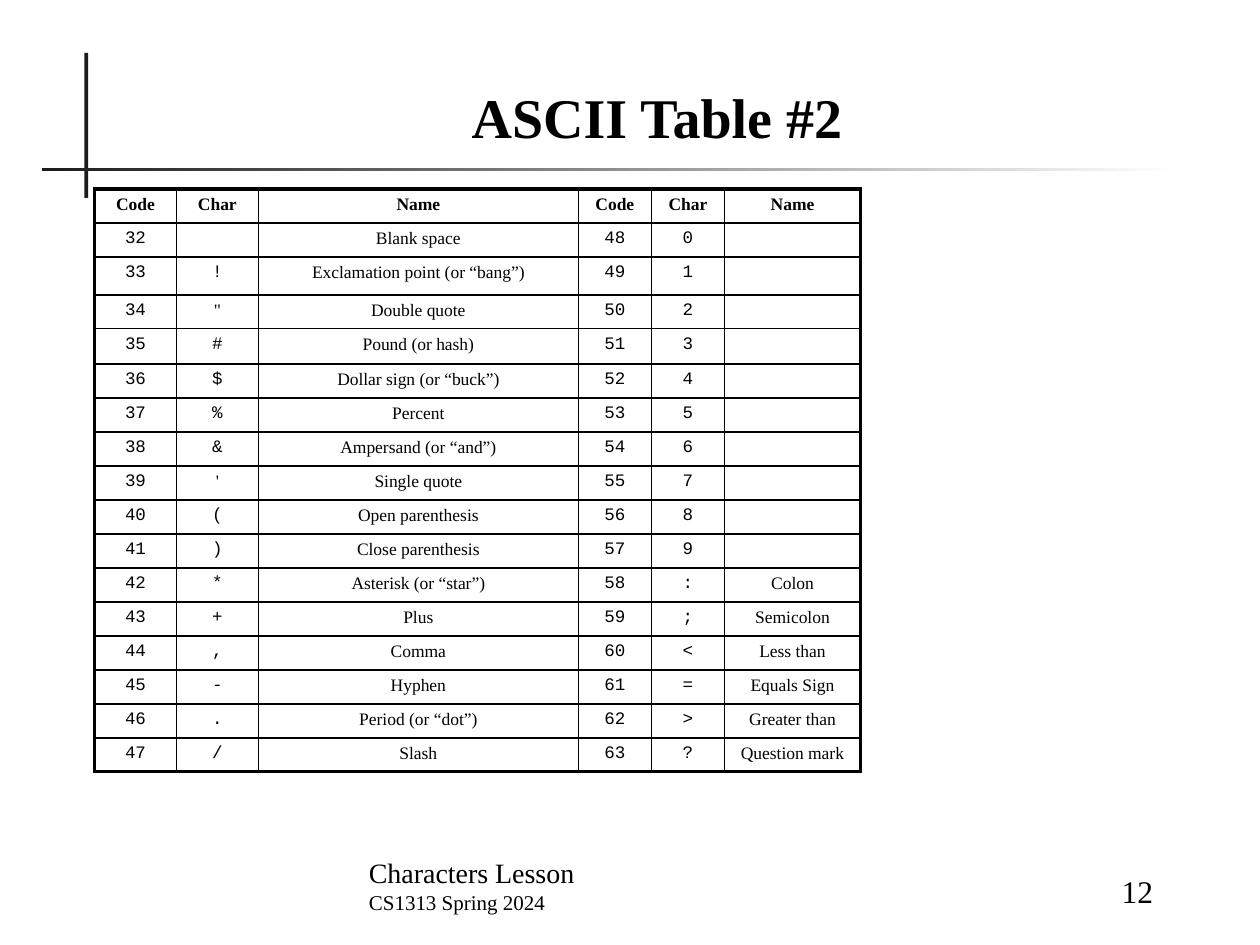
"""Build the slide with the second part of the ASCII table."""
from dataclasses import dataclass

from lxml.etree import SubElement as Sub
from pptx import Presentation
from pptx.dml.color import RGBColor
from pptx.enum.shapes import MSO_SHAPE as Kind
from pptx.enum.text import MSO_ANCHOR as Anchor, PP_ALIGN as Align
from pptx.oxml.ns import qn
from pptx.util import Inches, Pt

BLACK = RGBColor(0x00, 0x00, 0x00)
DARK = RGBColor(0x1C, 0x1C, 0x1C)
WHITE = RGBColor(0xFF, 0xFF, 0xFF)
SERIF, MONO = "Times New Roman", "Courier New"
THIN, THICK = Pt(1), Pt(2.25)


@dataclass
class Line:
    text: str
    size: float
    font: str = SERIF
    bold: bool = False


@dataclass
class Box:
    left: float
    top: float
    width: float
    height: float


@dataclass
class Label:
    box: Box
    lines: list[Line]
    align: Align


HEAD = ["Code", "Char", "Name"]
NAMES = [
    "Blank space", "Exclamation point (or “bang”)", "Double quote",
    "Pound (or hash)", "Dollar sign (or “buck”)", "Percent",
    "Ampersand (or “and”)", "Single quote", "Open parenthesis",
    "Close parenthesis", "Asterisk (or “star”)", "Plus", "Comma", "Hyphen",
    "Period (or “dot”)", "Slash", *[""] * 10, "Colon", "Semicolon",
    "Less than", "Equals Sign", "Greater than", "Question mark",
]
FIRST, HALF = 32, 16
WIDTHS = [0.65, 0.65, 2.54, 0.58, 0.58, 1.08]
HEIGHTS = [0.27, 0.27, 0.3, 0.27, 0.28] + [0.27] * 12
GRID = Box(0.75, 1.5, sum(WIDTHS), sum(HEIGHTS))
BARS = [Box(0.67, 0.42, 0.03, 1.15), Box(0.33, 1.33, 9, 0.03)]
LABELS = [
    Label(Box(7.83, 6.77, 1.42, 0.5), [Line("12", 18)], Align.RIGHT),
    Label(Box(2.83, 6.81, 4.83, 0.5),
          [Line("Characters Lesson", 16), Line("CS1313 Spring 2024", 12)],
          Align.LEFT),
    Label(Box(0.83, 0.5, 8.77, 0.74),
          [Line("ASCII Table #2", 32, bold=True)], Align.CENTER),
]


def place(box: Box) -> list[Inches]:
    """Give the position and size of a box as lengths."""
    return [Inches(n) for n in (box.left, box.top, box.width, box.height)]


def write(para, line: Line, align: Align) -> None:
    """Add one styled run to a paragraph."""
    para.alignment = align
    run = para.add_run()
    run.text = line.text
    font = run.font
    font.name, font.size, font.bold = line.font, Pt(line.size), line.bold
    font.color.rgb = BLACK


def add_label(slide, label: Label) -> None:
    """Draw a text box that sits on its lower edge."""
    frame = slide.shapes.add_textbox(*place(label.box)).text_frame
    frame.word_wrap = True
    frame.vertical_anchor = Anchor.BOTTOM
    for i, line in enumerate(label.lines):
        para = frame.add_paragraph() if i else frame.paragraphs[0]
        write(para, line, label.align)


def add_bar(slide, box: Box) -> None:
    """Draw a rule, fading to the right when it is flat."""
    bar = slide.shapes.add_shape(Kind.RECTANGLE, *place(box))
    bar.shadow.inherit = False
    bar.line.fill.background()
    if box.width < box.height:
        bar.fill.solid()
        bar.fill.fore_color.rgb = DARK
        return
    bar.fill.gradient()
    bar.fill.gradient_angle = 0
    for stop, color in zip(bar.fill.gradient_stops, (DARK, WHITE)):
        stop.color.rgb = color


def edge(cell, side: str, width: Pt) -> None:
    """Draw one border of a cell."""
    line = Sub(cell._tc.get_or_add_tcPr(), qn(f"a:ln{side}"), w=str(width))
    fill = Sub(line, qn("a:solidFill"))
    Sub(fill, qn("a:srgbClr"), val=str(BLACK))


def entry(code: int) -> list[Line]:
    """Give the code, character and name cells of one code."""
    char = chr(code)
    font = SERIF if char in "\"'" else MONO
    return [Line(str(code), 10, MONO), Line(char.strip(), 10, font),
            Line(NAMES[code - FIRST], 10)]


def add_grid(slide) -> None:
    """Draw the table of codes in two halves."""
    rows = [[Line(text, 10, bold=True) for text in HEAD * 2]]
    rows += [entry(n) + entry(n + HALF) for n in range(FIRST, FIRST + HALF)]
    last, end = len(rows) - 1, len(WIDTHS) - 1
    table = slide.shapes.add_table(
        len(rows), len(WIDTHS), *place(GRID)).table
    table.first_row = table.horz_banding = False
    for col, width in zip(table.columns, WIDTHS):
        col.width = Inches(width)
    for row, height in zip(table.rows, HEIGHTS):
        row.height = Inches(height)
    for r, row in enumerate(rows):
        for c, line in enumerate(row):
            cell = table.cell(r, c)
            outer = {"L": c == 0, "R": c == end, "T": r == 0, "B": r == last}
            for side, rim in outer.items():
                edge(cell, side, THICK if rim else THIN)
            cell.fill.background()
            para = cell.text_frame.paragraphs[0]
            if line.text:
                write(para, line, Align.CENTER)
            else:
                Sub(para._p, qn("a:endParaRPr"), sz="1000")


def main() -> None:
    """Build and save the slide."""
    deck = Presentation()
    deck.slide_width, deck.slide_height = Inches(10), Inches(7.5)
    slide = deck.slides.add_slide(deck.slide_layouts[6])
    for bar in BARS:
        add_bar(slide, bar)
    add_grid(slide)
    for label in LABELS:
        add_label(slide, label)
    deck.save("out.pptx")


if __name__ == "__main__":
    main()
